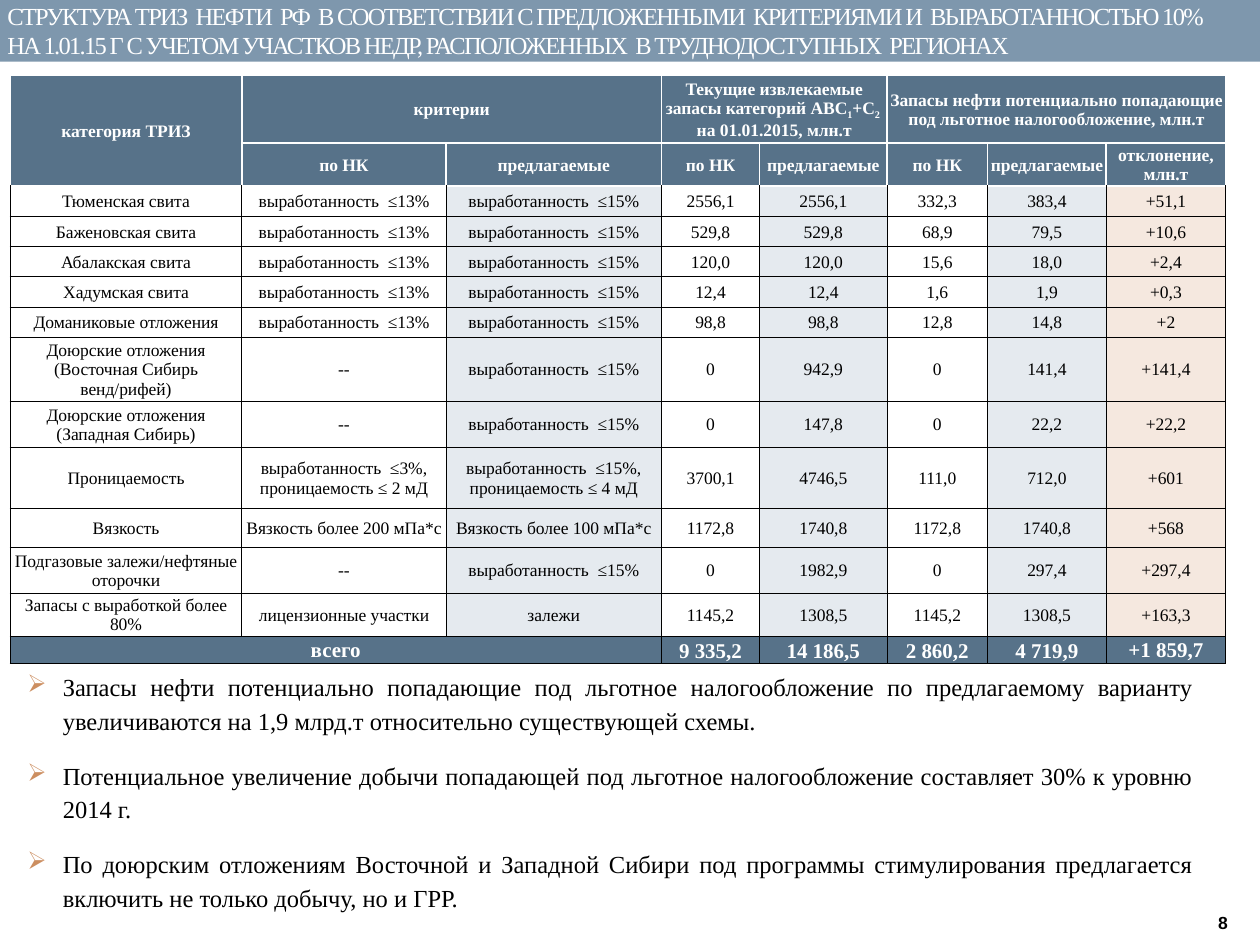
from lxml.etree import SubElement
from pptx import Presentation
from pptx.dml.color import RGBColor
from pptx.enum.shapes import MSO_SHAPE
from pptx.enum.text import MSO_ANCHOR, PP_ALIGN
from pptx.oxml.ns import qn
from pptx.util import Inches, Pt

WHITE = RGBColor(0xFF, 0xFF, 0xFF)
BLACK = RGBColor(0x00, 0x00, 0x00)
BAND_BLUE = RGBColor(0x7E, 0x97, 0xAD)
HEADER_BLUE = RGBColor(0x57, 0x72, 0x89)
PALE_BLUE = RGBColor(0xE5, 0xEA, 0xEF)
PALE_ORANGE = RGBColor(0xF5, 0xE8, 0xDF)
BULLET_ORANGE = RGBColor(0xCC, 0x8E, 0x60)
SERIF = "Times New Roman"

TITLE = ("СТРУКТУРА ТРИЗ  НЕФТИ  РФ  В СООТВЕТСТВИИ С ПРЕДЛОЖЕННЫМИ  КРИТЕРИЯМИ И  "
         "ВЫРАБОТАННОСТЬЮ 10% НА 1.01.15 Г С УЧЕТОМ УЧАСТКОВ НЕДР, РАСПОЛОЖЕННЫХ  "
         "В ТРУДНОДОСТУПНЫХ  РЕГИОНАХ")
PAGE = "8"
CURRENT_RESERVES = ["Текущие извлекаемые запасы категорий АВС", "1", "+С", "2  ",
                    "на 01.01.2015, млн.т"]
TAX_RESERVES = "Запасы нефти потенциально попадающие под льготное налогообложение, млн.т"
NK_13 = "выработанность  ≤13%"
OFFERED_15 = "выработанность  ≤15%"

ROWS = [
    ["категория ТРИЗ", "критерии", "", "", "", TAX_RESERVES, "", ""],
    ["", "по НК", "предлагаемые", "по НК", "предлагаемые", "по НК", "предлагаемые",
     "отклонение, млн.т"],
    ["Тюменская свита", NK_13, OFFERED_15, "2556,1", "2556,1", "332,3", "383,4", "+51,1"],
    ["Баженовская свита", NK_13, OFFERED_15, "529,8", "529,8", "68,9", "79,5", "+10,6"],
    ["Абалакская свита", NK_13, OFFERED_15, "120,0", "120,0", "15,6", "18,0", "+2,4"],
    ["Хадумская свита", NK_13, OFFERED_15, "12,4", "12,4", "1,6", "1,9", "+0,3"],
    ["Доманиковые отложения", NK_13, OFFERED_15, "98,8", "98,8", "12,8", "14,8", "+2"],
    ["Доюрские отложения (Восточная Сибирь венд/рифей)", "--", OFFERED_15,
     "0", "942,9", "0", "141,4", "+141,4"],
    ["Доюрские отложения (Западная Сибирь)", "--", OFFERED_15,
     "0", "147,8", "0", "22,2", "+22,2"],
    ["Проницаемость", "выработанность  ≤3%,\vпроницаемость ≤ 2 мД",
     "выработанность  ≤15%,\vпроницаемость ≤ 4 мД",
     "3700,1", "4746,5", "111,0", "712,0", "+601"],
    ["Вязкость", "Вязкость более 200 мПа*с", "Вязкость более 100 мПа*с",
     "1172,8", "1740,8", "1172,8", "1740,8", "+568"],
    ["Подгазовые залежи/нефтяные оторочки", "--", OFFERED_15,
     "0", "1982,9", "0", "297,4", "+297,4"],
    ["Запасы с выработкой более 80%", "лицензионные участки", "залежи",
     "1145,2", "1308,5", "1145,2", "1308,5", "+163,3"],
    ["всего", "", "", "9 335,2", "14 186,5", "2 860,2", "4 719,9", "+1 859,7"],
]
COLUMN_WIDTHS = [1.84, 1.62, 1.71, 0.78, 1.01, 0.8, 0.94, 0.95]
ROW_HEIGHTS = [0.49, 0.34] + [0.24] * 5 + [0.36, 0.36, 0.49, 0.31, 0.36, 0.18, 0.18]
MERGES = [(0, 0, 1, 0), (0, 1, 0, 2), (0, 3, 0, 4), (0, 5, 0, 7), (13, 0, 13, 2)]
COLUMN_FILLS = {2: PALE_BLUE, 4: PALE_BLUE, 6: PALE_BLUE, 7: PALE_ORANGE}
HEADER_ROWS = 2
TOTAL_ROW = len(ROWS) - 1

CONCLUSIONS = [
    "Запасы нефти потенциально попадающие под льготное налогообложение по предлагаемому "
    "варианту увеличиваются на 1,9 млрд.т относительно существующей схемы.",
    "Потенциальное увеличение добычи попадающей под льготное налогообложение составляет "
    "30% к уровню 2014 г.",
    "По доюрским отложениям Восточной и Западной Сибири под программы стимулирования "
    "предлагается включить не только добычу, но и ГРР.",
]


def style(font, size, color, bold=False, name=SERIF):
    font.name, font.size, font.bold = name, Pt(size), bold
    font.color.rgb = color


def add_text(slide, box, lines, size, color, anchor=MSO_ANCHOR.TOP, **look):
    frame = slide.shapes.add_textbox(*map(Inches, box)).text_frame
    frame.word_wrap = True
    frame.vertical_anchor = anchor
    frame.text = "\n".join(lines)
    for paragraph in frame.paragraphs:
        for run in paragraph.runs:
            style(run.font, size, color, **look)
    return frame.paragraphs


def add_bullet(paragraph):
    props = paragraph._p.get_or_add_pPr()
    props.set("marL", str(Inches(0.4)))
    props.set("indent", str(Inches(-0.28)))
    color = SubElement(props, qn("a:buClr"))
    SubElement(color, qn("a:srgbClr"), val=str(BULLET_ORANGE))
    SubElement(props, qn("a:buChar"), char="➢")


def set_borders(cell, row):
    props = cell._tc.get_or_add_tcPr()
    for side in "LRTB":
        white = row < HEADER_ROWS or (row == HEADER_ROWS and side == "T")
        line = SubElement(props, qn(f"a:ln{side}"), w=str(Pt(1 if white else 0.5)))
        fill = SubElement(line, qn("a:solidFill"))
        SubElement(fill, qn("a:srgbClr"), val=str(WHITE if white else BLACK))


def fill_cell(cell, row, column, content):
    strong = row < HEADER_ROWS or row == TOTAL_ROW
    set_borders(cell, row)
    fill = HEADER_BLUE if strong else COLUMN_FILLS.get(column)
    if fill is None:
        cell.fill.background()
    else:
        cell.fill.solid()
        cell.fill.fore_color.rgb = fill
    cell.margin_left = cell.margin_right = cell.margin_top = Inches(0.01)
    cell.margin_bottom = 0
    low = row == TOTAL_ROW and 3 <= column <= 6
    cell.vertical_anchor = MSO_ANCHOR.BOTTOM if low else MSO_ANCHOR.MIDDLE
    paragraph = cell.text_frame.paragraphs[0]
    if isinstance(content, list):
        for index, part in enumerate(content):
            run = paragraph.add_run()
            run.text = part
            if index % 2:
                run.font._element.set("baseline", "-25000")
    else:
        paragraph.text = content
    paragraph.alignment = PP_ALIGN.CENTER
    size = 12 if row == TOTAL_ROW else 10
    style(paragraph.font, size, WHITE if strong else BLACK, strong)
    for run in paragraph.runs:
        style(run.font, size, WHITE if strong else BLACK, strong)


def add_reserves(slide):
    frame = slide.shapes.add_table(len(ROWS), len(COLUMN_WIDTHS), Inches(0.08), Inches(0.6),
                                   Inches(sum(COLUMN_WIDTHS)), Inches(sum(ROW_HEIGHTS)))
    table = frame.table
    table.first_row = table.horz_banding = False
    for column, width in zip(table.columns, COLUMN_WIDTHS):
        column.width = Inches(width)
    for row, height in zip(table.rows, ROW_HEIGHTS):
        row.height = Inches(height)
    ROWS[0][3] = CURRENT_RESERVES
    for row, contents in enumerate(ROWS):
        for column, content in enumerate(contents):
            fill_cell(table.cell(row, column), row, column, content)
    for top, left, bottom, right in MERGES:
        table.cell(top, left).merge(table.cell(bottom, right))


def main():
    deck = Presentation()
    deck.slide_width, deck.slide_height = Inches(10), Inches(7.5)
    slide = deck.slides.add_slide(deck.slide_layouts[6])

    band = slide.shapes.add_shape(MSO_SHAPE.RECTANGLE, 0, 0, deck.slide_width, Inches(0.49))
    band.shadow.inherit = False
    band.fill.solid()
    band.fill.fore_color.rgb = BAND_BLUE
    band.line.fill.background()

    title = add_text(slide, (-0.04, 0.02, 9.76, 0.44), [TITLE], 14, WHITE, MSO_ANCHOR.MIDDLE)
    title[0].runs[0].font._element.set("spc", "-100")
    add_text(slide, (9.57, 7.14, 0.42, 0.36), [PAGE], 10, BLACK, MSO_ANCHOR.MIDDLE,
             bold=True, name="Arial")

    conclusions = add_text(slide, (0, 5.25, 9.57, 2.06), CONCLUSIONS, 14, BLACK)
    for index, paragraph in enumerate(conclusions):
        add_bullet(paragraph)
        paragraph.alignment = PP_ALIGN.JUSTIFY
        paragraph.line_spacing = 1.15
        paragraph.space_before = Pt(6 if index else 0)
        paragraph.space_after = Pt(6)

    add_reserves(slide)
    deck.save("out.pptx")


if __name__ == "__main__":
    main()
